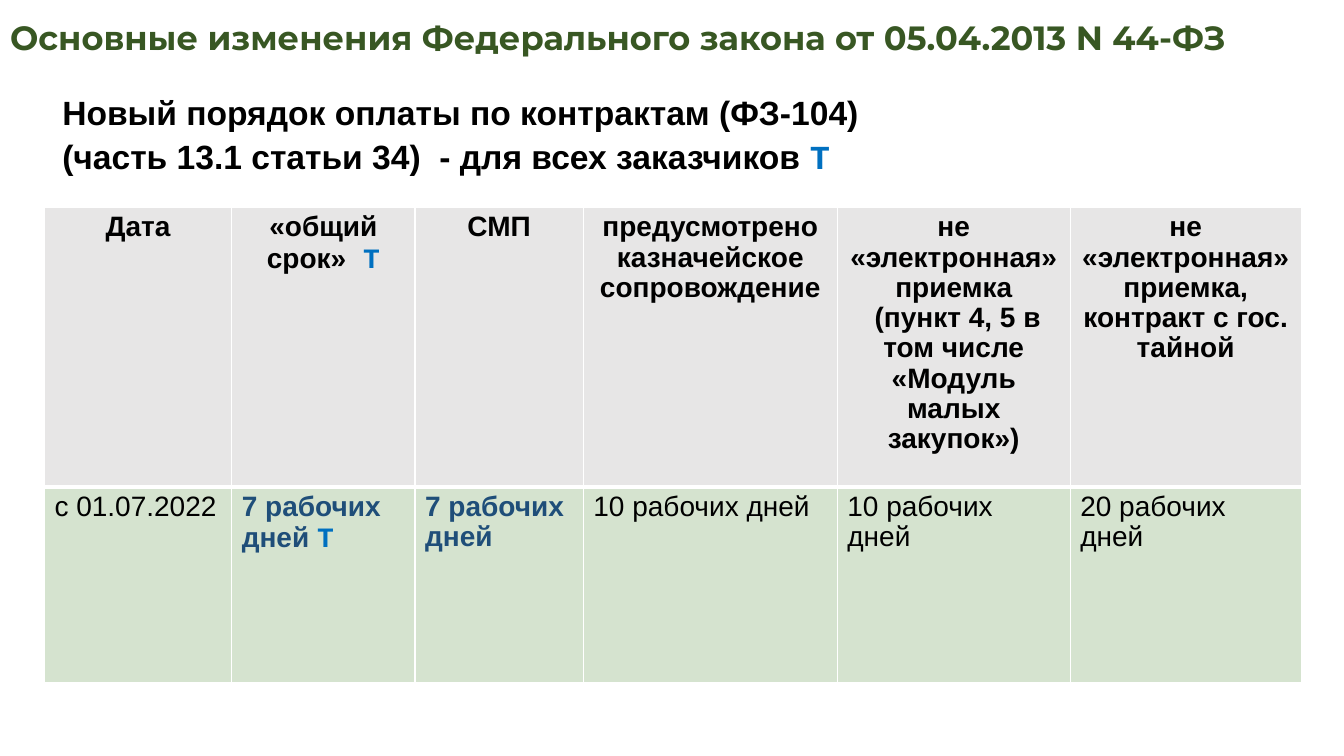
from lxml import etree
from pptx import Presentation, util as u
from pptx.dml.color import RGBColor
from pptx.enum import text
from pptx.oxml.ns import qn

BLACK, BLUE, NAVY, WHITE = "000000", "0070C0", "1F4E79", "FFFFFF"


def add_run(paragraph, wording, size, color, bold=True, font="Arial"):
    run = paragraph.add_run()
    run.text = wording
    run.font.name = font
    run.font.size = u.Pt(size)
    run.font.bold = bold
    run.font.color.rgb = RGBColor.from_string(color)


def add_border(cell, side, points):
    line = etree.SubElement(cell._tc.get_or_add_tcPr(), qn(f"a:ln{side}"), w=str(u.Pt(points)))
    fill = etree.SubElement(line, qn("a:solidFill"))
    etree.SubElement(fill, qn("a:srgbClr"), val=WHITE)


presentation = Presentation()
presentation.slide_width = u.Cm(33.87)
presentation.slide_height = u.Cm(19.05)
slide = presentation.slides.add_slide(presentation.slide_layouts[5])

title = slide.shapes.title
title.left, title.top, title.width, title.height = u.Cm(0), u.Cm(0.3), u.Cm(33.45), u.Cm(1.27)
title.text_frame.vertical_anchor = text.MSO_ANCHOR.TOP
title.text_frame.word_wrap = True
title.text_frame.auto_size = text.MSO_AUTO_SIZE.NONE
paragraph = title.text_frame.paragraphs[0]
paragraph.alignment = text.PP_ALIGN.LEFT
add_run(paragraph, "Основные изменения Федерального закона от 05.04.2013 N 44-ФЗ", 24, "385723", font="Montserrat")

subtitle = slide.shapes.add_textbox(u.Cm(1.32), u.Cm(2.13), u.Cm(31.27), u.Cm(2.31))
frame = subtitle.text_frame
frame.word_wrap = True
frame.auto_size = text.MSO_AUTO_SIZE.SHAPE_TO_FIT_TEXT
add_run(frame.paragraphs[0], "Новый порядок оплаты по контрактам (ФЗ-104)", 24, BLACK)
add_run(frame.add_paragraph(), "(часть 13.1 статьи 34)  - для всех заказчиков ", 24, BLACK)
add_run(frame.paragraphs[1], "Т", 24, BLUE, font="Courier New")
for paragraph in frame.paragraphs:
    paragraph.alignment = text.PP_ALIGN.JUSTIFY
    paragraph.line_spacing = 1.07

headings = [
    ["Дата"],
    ["«общий срок»"],
    ["СМП"],
    ["предусмотрено казначейское сопровождение"],
    ["не «электронная» приемка", " (пункт 4, 5 в том числе «Модуль малых закупок»)"],
    ["не «электронная» приемка, контракт с гос. тайной"],
]
terms = [
    ["с 01.07.2022"],
    ["7 рабочих дней "],
    ["7 рабочих дней"],
    ["10 рабочих дней"],
    ["10 рабочих дней"],
    ["20 рабочих дней"],
]
column_widths = [4.72, 4.62, 4.24, 6.4, 5.87, 5.82]
row_heights = [7.04, 4.93]
marks = {(0, 1): " Т", (1, 1): "Т"}
highlighted_columns = (1, 2)

payment_table = slide.shapes.add_table(
    2, 6, u.Cm(1.12), u.Cm(5.23), u.Cm(sum(column_widths)), u.Cm(sum(row_heights))
).table
payment_table.first_row = False
payment_table.horz_banding = False
for column, width in zip(payment_table.columns, column_widths):
    column.width = u.Cm(width)

for row_index, (row_texts, height) in enumerate(zip([headings, terms], row_heights)):
    payment_table.rows[row_index].height = u.Cm(height)
    is_header = row_index == 0
    for column_index, wordings in enumerate(row_texts):
        cell = payment_table.cell(row_index, column_index)
        thick_side = "B" if is_header else "T"
        for side in "LRTB":
            add_border(cell, side, 3 if side == thick_side else 1)
        cell.fill.solid()
        cell.fill.fore_color.rgb = RGBColor.from_string("E7E6E6" if is_header else "D5E3CF")
        highlighted = not is_header and column_index in highlighted_columns
        frame = cell.text_frame
        for index, wording in enumerate(wordings):
            paragraph = frame.add_paragraph() if index else frame.paragraphs[0]
            paragraph.alignment = text.PP_ALIGN.CENTER if is_header else text.PP_ALIGN.LEFT
            paragraph.line_spacing = 0.97
            add_run(paragraph, wording, 20, NAVY if highlighted else BLACK, is_header or highlighted)
        if (row_index, column_index) in marks:
            add_run(paragraph, marks[row_index, column_index], 20, BLUE, font="Courier New")

presentation.save("out.pptx")
